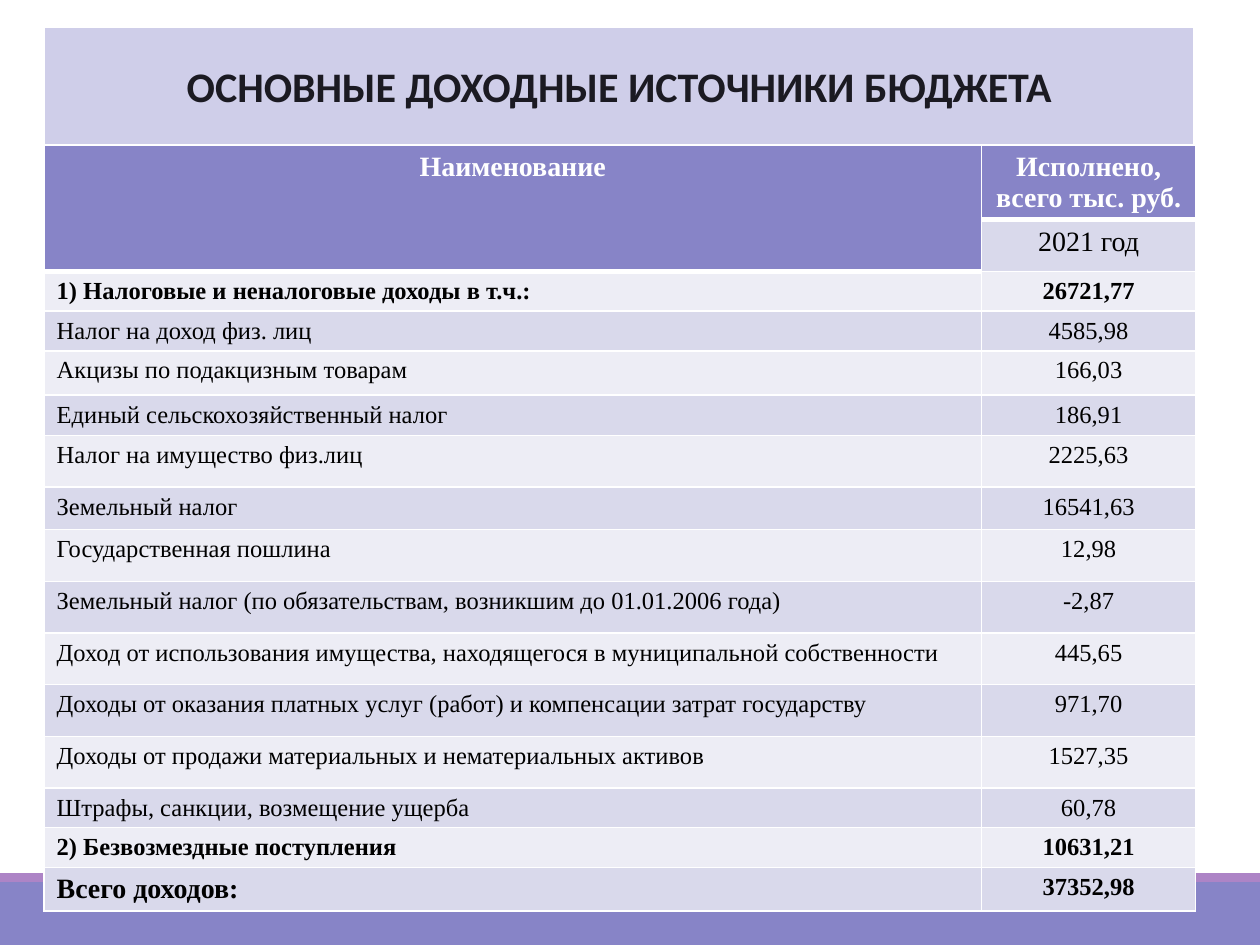
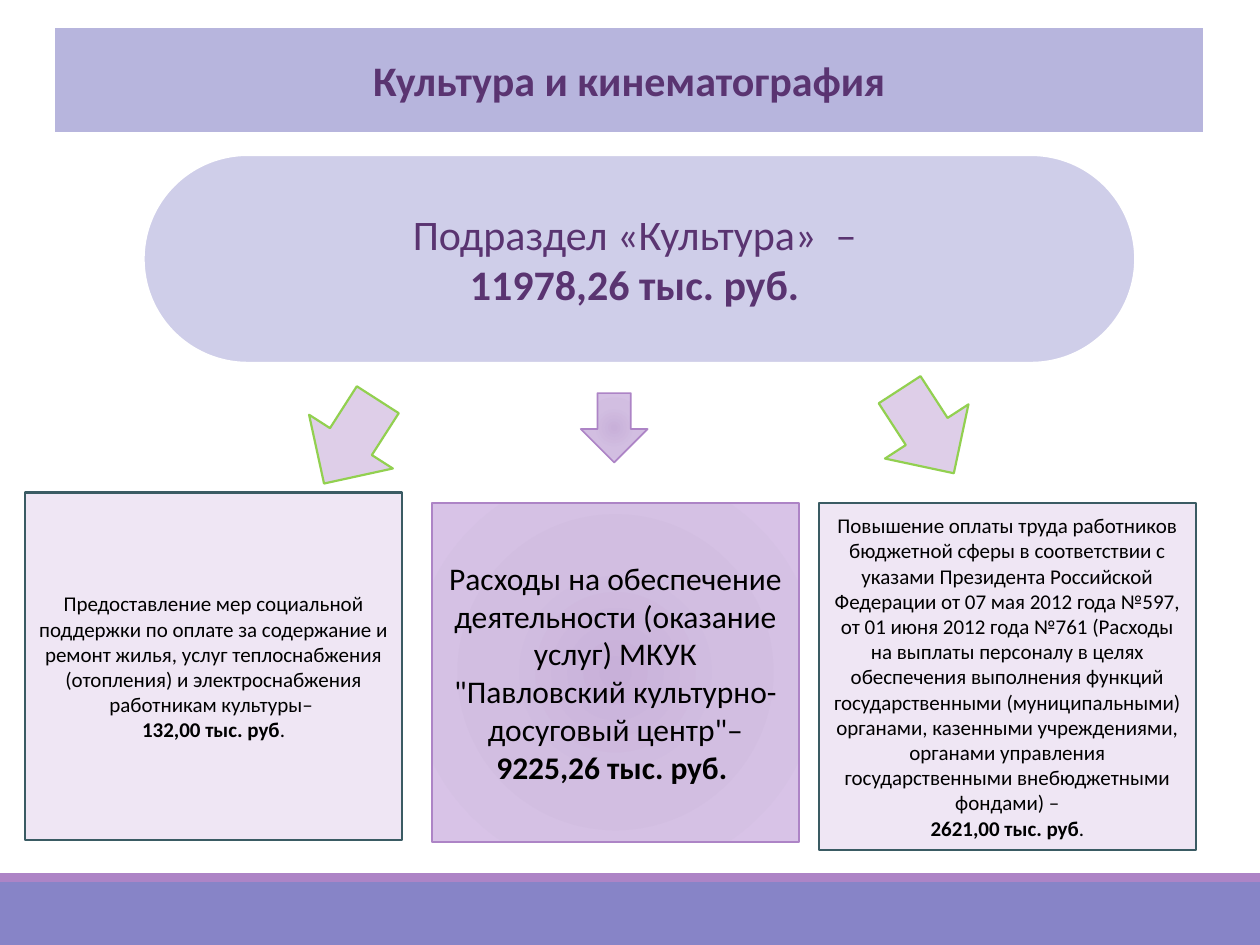
from dataclasses import dataclass
from typing import Optional

from lxml import etree
from pptx import Presentation
from pptx import oxml
from pptx import util as u
from pptx.dml import color as dml
from pptx.enum import shapes, text
from pptx.oxml import ns

HUES = {
    "white": "FFFFFF", "black": "000000", "ink": "1B1A22", "plum": "5A3471",
    "band": "8784C7", "stripe": "AD84C6", "soft": "CFCEE9", "mid": "B7B5DD",
    "dark": "D9D9EB", "light": "EDEDF5", "pale": "EFE6F4", "slate": "3A5B63",
    "lilac": "DECEE8", "green": "92D050",
    "core": "C8B0D9", "ring": "D2BEE1", "edge": "D8C3E7",
}
GLOW = ((0, "core"), (45, "ring"), (100, "edge"))
SANS, SERIF = "Calibri", "Times New Roman"
KIND = shapes.MSO_SHAPE
MID = text.PP_ALIGN.CENTER


@dataclass
class Run:
    words: str
    bold: bool = False


@dataclass
class Box:
    kind: shapes.MSO_SHAPE
    at: tuple[float, float, float, float]
    fill: Optional[str]  # None means the radial glow
    line: Optional[str] = None
    width: float = 1.25
    turn: float = 0
    round: Optional[float] = None
    paras: tuple[tuple[Run, ...], ...] = ()
    size: int = 12
    hue: str = "black"


def rgb(name: str) -> dml.RGBColor:
    return dml.RGBColor.from_string(HUES[name])


def add_run(para, run: Run, size: int, hue: str, face: str) -> None:
    part = para.add_run()
    part.text = run.words
    font = part.font
    font.name, font.size, font.bold = face, u.Pt(size), run.bold
    font.color.rgb = rgb(hue)


def add_glow(shape) -> None:
    """Swap the solid fill for a circular gradient."""
    stops = "".join(
        f'<a:gs pos="{pos * 1000}"><a:srgbClr val="{HUES[hue]}"/></a:gs>'
        for pos, hue in GLOW)
    grad = oxml.parse_xml(
        f'<a:gradFill {ns.nsdecls("a")} rotWithShape="1"><a:gsLst>{stops}</a:gsLst>'
        '<a:path path="circle"><a:fillToRect l="100000" t="100000" r="100000" '
        'b="100000"/></a:path></a:gradFill>')
    props = shape.element.spPr
    props.replace(props.find(ns.qn("a:solidFill")), grad)


def style(shape, box: Box) -> None:
    """Fill, outline and text, for shapes and titles alike."""
    shape.fill.solid()
    shape.fill.fore_color.rgb = rgb(box.fill or "ring")
    if box.fill is None:
        add_glow(shape)
    if box.line:
        shape.line.color.rgb = rgb(box.line)
        shape.line.width = u.Pt(box.width)
    else:
        shape.line.fill.background()
    if box.round is not None:
        shape.adjustments[0] = box.round
    frame = shape.text_frame
    frame.word_wrap = True
    frame.auto_size = text.MSO_AUTO_SIZE.NONE
    frame.vertical_anchor = text.MSO_ANCHOR.MIDDLE
    for n, runs in enumerate(box.paras):
        para = frame.add_paragraph() if n else frame.paragraphs[0]
        para.alignment = MID
        for run in runs:
            add_run(para, run, box.size, box.hue, SANS)


def add_box(slide, box: Box):
    shape = slide.shapes.add_shape(box.kind, *map(u.Inches, box.at))
    shape.shadow.inherit = False
    shape.rotation = box.turn
    style(shape, box)
    return shape


def set_title(slide, box: Box) -> None:
    """Give the title placeholder a rounded band of its own."""
    title = slide.shapes.title
    title.left, title.top, title.width, title.height = map(u.Inches, box.at)
    geom = etree.SubElement(title.element.spPr, ns.qn("a:prstGeom"), prst="roundRect")
    etree.SubElement(geom, ns.qn("a:avLst"))
    style(title, box)


# Footer bands, shared through the layout
BANDS = (
    Box(KIND.RECTANGLE, (0, 7, 10, 0.5), "band"),
    Box(KIND.RECTANGLE, (0, 6.93, 10, 0.07), "stripe"),
)


def add_bands(slide, layout) -> None:
    for n, band in enumerate(BANDS):
        shape = add_box(slide, band)
        layout.shapes.element.insert(2 + n, shape.element)


# Income table
INCOME = (
    ("1) Налоговые и неналоговые доходы в т.ч.:", "26721,77", 0.29),
    ("Налог на доход физ. лиц", "4585,98", 0.31),
    ("Акцизы по подакцизным товарам", "166,03", 0.35),
    ("Единый сельскохозяйственный налог", "186,91", 0.32),
    ("Налог на имущество физ.лиц", "2225,63", 0.41),
    ("Земельный налог", "16541,63", 0.34),
    ("Государственная пошлина", "12,98", 0.41),
    ("Земельный налог (по обязательствам, возникшим до 01.01.2006 года)", "-2,87", 0.41),
    ("Доход от использования имущества, находящегося в муниципальной собственности",
     "445,65", 0.41),
    ("Доходы от оказания платных услуг (работ) и компенсации затрат государству",
     "971,70", 0.41),
    ("Доходы от продажи материальных и нематериальных активов", "1527,35", 0.41),
    ("Штрафы, санкции, возмещение ущерба", "60,78", 0.29),
    ("2) Безвозмездные поступления", "10631,21", 0.26),
    ("Всего доходов:", "37352,98", 0.26),
)
BOLD = {0, len(INCOME) - 2, len(INCOME) - 1}
COLS = (7.44, 1.7)
HEAD = 0.41


def set_cell(cell, run: Optional[Run], fill: str, size: int = 14, hue: str = "black",
             mid: bool = True, base: float = 1) -> None:
    cell.fill.solid()
    cell.fill.fore_color.rgb = rgb(fill)
    props = cell._tc.get_or_add_tcPr()
    for n, side in enumerate("LRTB"):
        width = u.Pt(base if side == "B" else 1)
        props.insert(n, oxml.parse_xml(
            f'<a:ln{side} {ns.nsdecls("a")} w="{width}"><a:solidFill>'
            f'<a:srgbClr val="{HUES["white"]}"/></a:solidFill></a:ln{side}>'))
    if run:
        para = cell.text_frame.paragraphs[0]
        para.alignment = MID if mid else text.PP_ALIGN.LEFT
        add_run(para, run, size, hue, SERIF)


def add_income(slide) -> None:
    highs = [HEAD, HEAD] + [row[2] for row in INCOME]
    grid = slide.shapes.add_table(
        len(highs), len(COLS), *map(u.Inches, (0.35, 1.15, sum(COLS), sum(highs)))).table
    for col, wide in zip(grid.columns, COLS):
        col.width = u.Inches(wide)
    for row, high in zip(grid.rows, highs):
        row.height = u.Inches(high)

    # Header
    grid.cell(0, 0).merge(grid.cell(1, 0))
    set_cell(grid.cell(0, 0), Run("Наименование", True), "band", 16, "white", base=3)
    set_cell(grid.cell(1, 0), None, "band", base=3)
    set_cell(grid.cell(0, 1), Run("Исполнено, всего тыс. руб.", True), "band", 16,
             "white", base=3)
    set_cell(grid.cell(1, 1), Run("2021 год"), "dark", 16)

    # Body, with alternating rows
    for n, (name, value, _) in enumerate(INCOME):
        fill = "dark" if n % 2 else "light"
        bold = n in BOLD
        size = 16 if n == len(INCOME) - 1 else 14
        set_cell(grid.cell(n + 2, 0), Run(name, bold), fill, size, mid=False)
        set_cell(grid.cell(n + 2, 1), Run(value, bold), fill)


# Titles
BUDGET = Box(KIND.ROUNDED_RECTANGLE, (0.35, 0.21, 9.13, 0.94), "soft", "white",
             paras=((Run("ОСНОВНЫЕ ДОХОДНЫЕ ИСТОЧНИКИ БЮДЖЕТА", True),),),
             size=24, hue="ink")
CULTURE = Box(KIND.ROUNDED_RECTANGLE, (0.43, 0.21, 9.13, 0.85), "mid", "white", round=0.5,
              paras=((Run("Культура и кинематография", True),),), size=24, hue="plum")


# Culture spending: total, arrows, three items
def arrow(left: float, top: float, turn: float) -> Box:
    return Box(KIND.DOWN_ARROW, (left, top, 0.79, 0.79), "lilac", "green", turn=turn)


def card(left: float, top: float, words: str, total: str) -> Box:
    return Box(KIND.RECTANGLE, (left, top, 2.99, 2.76), "pale", "slate",
               paras=((Run(words),), (Run(total, True), Run("."))))


SPENDING = (
    Box(KIND.ROUNDED_RECTANGLE, (1.14, 1.23, 7.87, 1.65), "soft", "white", round=0.5,
        paras=((Run("Подраздел «Культура»  – "),), (Run("11978,26 тыс. руб. ", True),)),
        size=24, hue="plum"),
    arrow(2.39, 3.11, 32.7),
    arrow(6.96, 3.03, 327),
    card(0.2, 3.91,
         "Предоставление мер социальной поддержки по оплате за содержание и ремонт жилья, "
         "услуг теплоснабжения (отопления) и электроснабжения работникам культуры– ",
         "132,00 тыс. руб"),
    card(6.5, 3.99,
         "Повышение оплаты труда работников бюджетной сферы в соответствии с указами "
         "Президента Российской Федерации от 07 мая 2012 года №597, от 01 июня 2012 года "
         "№761 (Расходы на выплаты персоналу в целях обеспечения выполнения функций "
         "государственными (муниципальными) органами, казенными учреждениями, органами "
         "управления государственными внебюджетными фондами) –",
         "2621,00 тыс. руб"),
    Box(KIND.RECTANGLE, (3.43, 3.99, 2.91, 2.69), None, "stripe", 1, size=18,
        paras=((Run("Расходы на обеспечение деятельности (оказание услуг) МКУК "
                    "\"Павловский культурно-досуговый центр\"–"),
                Run("9225,26 тыс. руб. ", True)),)),
    Box(KIND.DOWN_ARROW, (4.61, 3.12, 0.53, 0.55), None, "stripe", 1),
)


def main() -> None:
    deck = Presentation()
    deck.slide_width, deck.slide_height = u.Inches(10), u.Inches(7.5)
    layout = deck.slide_layouts[5]

    first = deck.slides.add_slide(layout)
    add_bands(first, layout)
    set_title(first, BUDGET)
    add_income(first)

    second = deck.slides.add_slide(layout)
    set_title(second, CULTURE)
    for box in SPENDING:
        add_box(second, box)

    deck.save("out.pptx")


if __name__ == "__main__":
    main()
